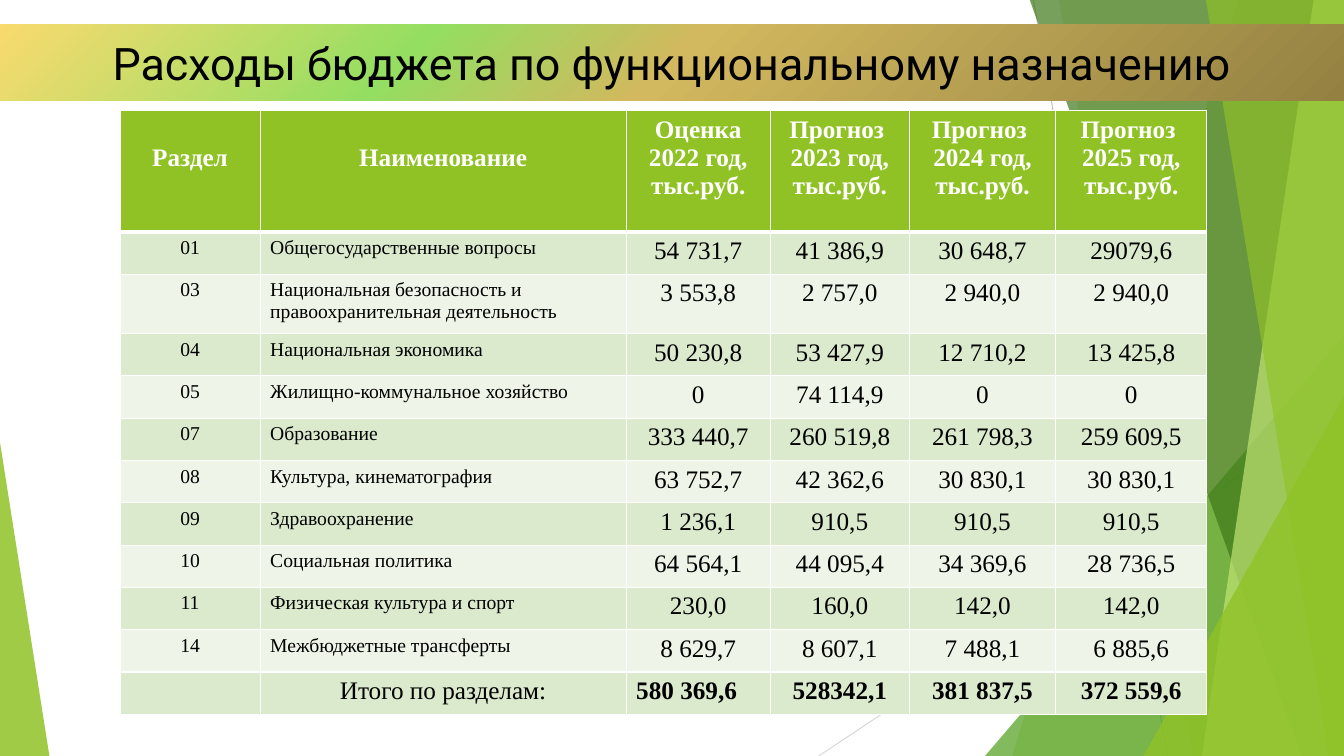
from lxml.etree import SubElement
from pptx import Presentation
from pptx.dml.color import RGBColor
from pptx.enum.shapes import MSO_CONNECTOR, MSO_SHAPE
from pptx.enum.text import MSO_ANCHOR, MSO_AUTO_SIZE, PP_ALIGN
from pptx.oxml.ns import qn
from pptx.util import Pt

SCALE = 9144
COLORS = {
    "lime": "90C226", "green": "54A021", "forest": "3F7819", "pale": "C0E474",
    "gray": "BFBFBF", "silver": "D9D9D9", "white": "FFFFFF", "black": "000000",
    "band_dark": "DBE9CD", "band_light": "EEF4E8",
    "bronze": "948142", "gold": "D2B85E", "mint": "94DE61", "yellow": "F9DA6F",
}
SERIF = "Times New Roman"
TITLE = {"name": "Roboto", "size": Pt(32), "bold": False}
HEADER = {"name": SERIF, "size": Pt(18), "bold": True}
SMALL = {"name": SERIF, "size": Pt(14), "bold": False}
FIGURE = {"name": SERIF, "size": Pt(18), "bold": False}
COLUMNS = [139, 363, 143, 138, 145, 150]
HEADINGS = ["Раздел", "Наименование", "Оценка 2022 год, тыс.руб.",
            "Прогноз \n2023 год, тыс.руб.", "Прогноз \n2024 год, тыс.руб.",
            "Прогноз \n2025 год, тыс.руб."]
EXPENSES = [
    ["01", "Общегосударственные вопросы", "54 731,7", "41 386,9", "30 648,7", "29079,6"],
    ["03", "Национальная безопасность и правоохранительная деятельность",
     "3 553,8", "2 757,0", "2 940,0", "2 940,0"],
    ["04", "Национальная экономика", "50 230,8", "53 427,9", "12 710,2", "13 425,8"],
    ["05", "Жилищно-коммунальное хозяйство", "0", "74 114,9", "0", "0"],
    ["07", "Образование", "333 440,7", "260 519,8", "261 798,3", "259 609,5"],
    ["08", "Культура, кинематография", "63 752,7", "42 362,6", "30 830,1", "30 830,1"],
    ["09", "Здравоохранение", "1 236,1", "910,5", "910,5", "910,5"],
    ["10", "Социальная политика", "64 564,1", "44 095,4", "34 369,6", "28 736,5"],
    ["11", "Физическая культура и спорт", "230,0", "160,0", "142,0", "142,0"],
    ["14", "Межбюджетные трансферты", "8 629,7", "8 607,1", "7 488,1", "6 885,6"],
]
TOTALS = ["", "Итого по разделам:", "580 369,6", "528342,1", "381 837,5", "372 559,6"]


def px(*lengths):
    """Turn pixel lengths into EMU."""
    return [length * SCALE for length in lengths]


def rgb(name):
    """Look up a named colour."""
    return RGBColor.from_string(COLORS[name])


def write(frame, text, style, color, align):
    """Write each line of text as one formatted paragraph."""
    frame.text = text
    for para in frame.paragraphs:
        para.alignment = align
        for span in para.runs:
            for key, value in style.items():
                setattr(span.font, key, value)
            span.font.color.rgb = rgb(color)


def paint(shape, color, opacity):
    """Give a shape a translucent fill with no line or shadow."""
    shape.shadow.inherit = False
    shape.fill.solid()
    shape.fill.fore_color.rgb = rgb(color)
    tint = shape.element.spPr.xpath(".//a:srgbClr")[0]
    SubElement(tint, qn("a:alpha"), val=str(opacity * 1000))
    shape.line.fill.background()


def add_line(group, start, end, color):
    """Draw a thin straight line."""
    line = group.shapes.add_connector(MSO_CONNECTOR.STRAIGHT, *px(*start, *end))
    line.line.color.rgb = rgb(color)
    line.line.width = Pt(0.75)
    SubElement(line.element.spPr, qn("a:effectLst"))


def add_shard(group, box, top_left, bottom_left, color, opacity):
    """Draw a slanted shard reaching the right side of the box."""
    left, top, width, height = box
    right, bottom = left + width, top + height
    builder = group.shapes.build_freeform(left + top_left, top, scale=SCALE)
    builder.add_line_segments(
        [(right, top), (right, bottom), (left + bottom_left, bottom)], close=True)
    paint(builder.convert_to_shape(), color, opacity)


def add_triangle(group, box, apex, color, opacity):
    """Draw a triangle whose apex lies at a fraction of its width."""
    triangle = group.shapes.add_shape(MSO_SHAPE.ISOSCELES_TRIANGLE, *px(*box))
    triangle.adjustments[0] = apex
    paint(triangle, color, opacity)


def add_backdrop(page, box):
    """Layer the lines, shards and triangles in the given box."""
    left, top, width, height = box
    right, bottom = left + width, top + height
    group = page.shapes.add_group_shape()

    def shard(size, *details):
        """Place a shard against the right edge."""
        add_shard(group, (right - size, top - 1, size, height + 1), *details)

    def triangle(size, rise, *details):
        """Place a triangle in the bottom right corner."""
        add_triangle(group, (right - size, bottom - rise, size, rise), 1, *details)

    add_line(group, (left + 1025, top), (left + 1158, bottom), "gray")
    add_line(group, (right, top + 403), (left + 812, bottom), "silver")
    shard(329, 224, 0, "lime", 30)
    shard(283, 0, 133, "lime", 20)
    triangle(356, 417, "green", 72)
    shard(312, 0, 270, "forest", 70)
    shard(141, 111, 0, "pale", 70)
    shard(137, 0, 122, "lime", 65)
    triangle(199, 357, "lime", 80)
    add_triangle(group, (left, bottom - 311, 49, 311), 0, "lime", 85)


def add_title(page, box):
    """Place the title on a radial gradient band above the backdrop."""
    title = page.shapes.title
    title.element.getparent().append(title.element)
    for key, value in zip(("left", "top", "width", "height"), px(*box)):
        setattr(title, key, value)
    gradient = SubElement(title.element.spPr, qn("a:gradFill"), rotWithShape="1")
    stops = SubElement(gradient, qn("a:gsLst"))
    for position, name in ((0, "bronze"), (50, "gold"), (69, "mint"), (100, "yellow")):
        stop = SubElement(stops, qn("a:gs"), pos=str(position * 1000))
        SubElement(stop, qn("a:srgbClr"), val=COLORS[name])
    focus = SubElement(gradient, qn("a:path"), path="circle")
    SubElement(focus, qn("a:fillToRect"), l="100000", t="100000")
    frame = title.text_frame
    frame.word_wrap = True
    frame.auto_size = MSO_AUTO_SIZE.NONE
    frame.vertical_anchor = MSO_ANCHOR.MIDDLE
    write(frame, "Расходы бюджета по функциональному назначению",
          TITLE, "black", PP_ALIGN.CENTER)


def format_cell(cell, fill, borders):
    """Set white borders of the given point widths, then the fill."""
    properties = cell._tc.get_or_add_tcPr()
    for side, width in borders.items():
        edge = SubElement(properties, qn(f"a:ln{side}"), w=str(Pt(width)))
        solid = SubElement(edge, qn("a:solidFill"))
        SubElement(solid, qn("a:srgbClr"), val=COLORS["white"])
    cell.fill.solid()
    cell.fill.fore_color.rgb = rgb(fill)


def cell_style(row, column, last):
    """Choose font, colour and alignment for a table position."""
    if row == 0:
        return HEADER, "white", PP_ALIGN.CENTER
    if row == last:
        style = HEADER if column > 1 else FIGURE
        return style, "black", PP_ALIGN.LEFT if column == 2 else PP_ALIGN.CENTER
    style = SMALL if column < 2 else FIGURE
    return style, "black", PP_ALIGN.LEFT if column == 1 else PP_ALIGN.CENTER


def add_expenses(page, box):
    """Build the budget table in the given box."""
    content = [HEADINGS, *EXPENSES, TOTALS]
    last = len(content) - 1
    table = page.shapes.add_table(len(content), len(COLUMNS), *px(*box)).table
    for column, width in zip(table.columns, px(*COLUMNS)):
        column.width = width
    heights = {0: 120, 2: 59}
    for row, texts in enumerate(content):
        table.rows[row].height = heights.get(row, 42) * SCALE
        fill = "lime" if row == 0 else "band_dark" if row % 2 else "band_light"
        borders = {"L": 1, "R": 1, "T": 3 if row == 1 else 1, "B": 3 if row == 0 else 1}
        for column, text in enumerate(texts):
            cell = table.cell(row, column)
            format_cell(cell, fill, borders)
            if row == 0 and column < 2:
                cell.margin_top = 33 * SCALE
            if text:
                write(cell.text_frame, text, *cell_style(row, column, last))


def main():
    """Build and save the budget slide."""
    deck = Presentation()
    deck.slide_width, deck.slide_height = px(1333, 750)
    page = deck.slides.add_slide(deck.slide_layouts[5])
    add_backdrop(page, (0, 0, 1333, 750))
    add_title(page, (0, 24, 1333, 76))
    add_expenses(page, (119, 110, 1078, 599))
    deck.save("out.pptx")


if __name__ == "__main__":
    main()
